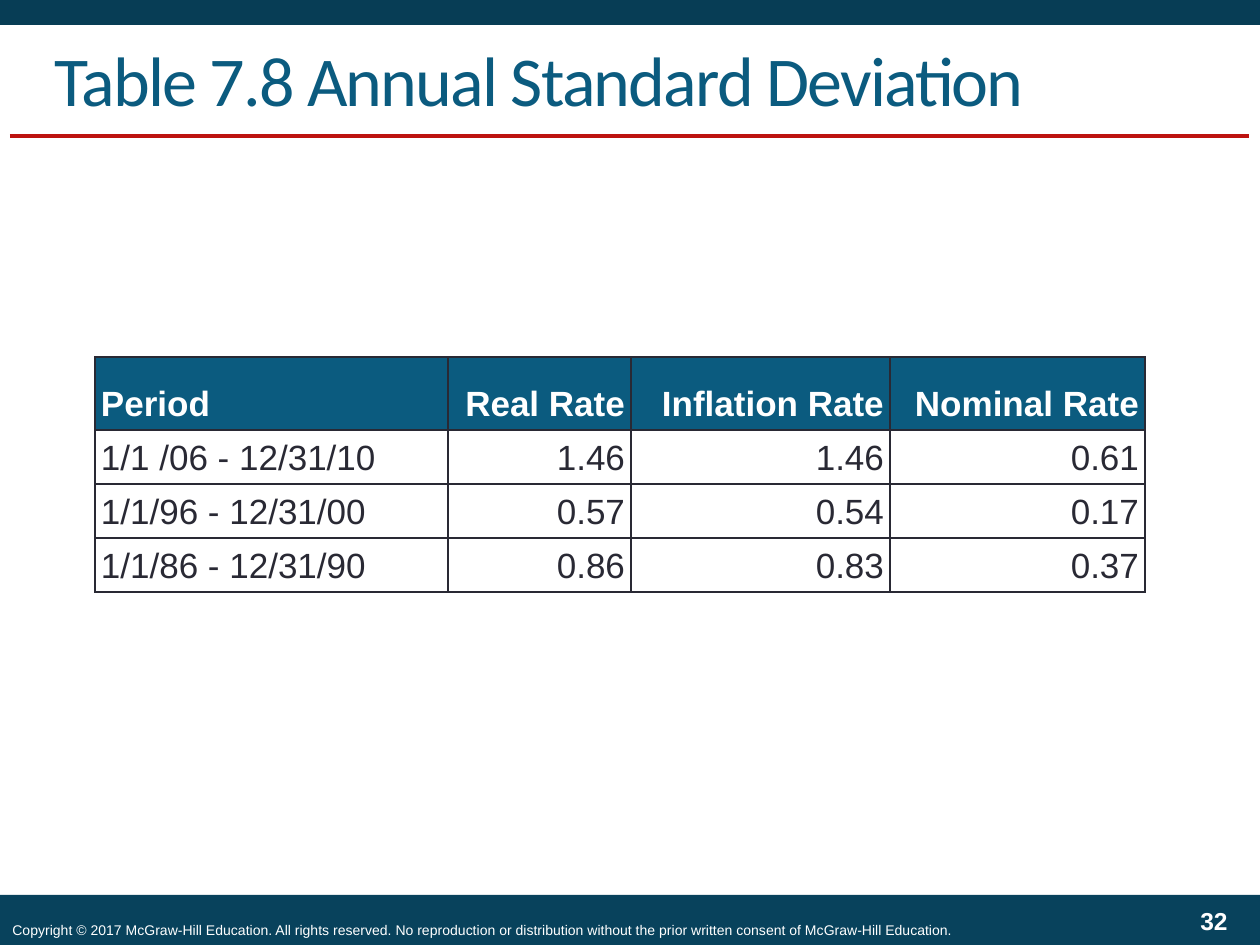
from lxml import etree
from pptx import Presentation
from pptx.dml.color import RGBColor
from pptx.enum.shapes import MSO_CONNECTOR, MSO_SHAPE
from pptx.enum.text import MSO_ANCHOR, PP_ALIGN
from pptx.oxml.ns import qn
from pptx.util import Emu, Pt

LEFT, RIGHT = PP_ALIGN.LEFT, PP_ALIGN.RIGHT
MIDDLE, BOTTOM = MSO_ANCHOR.MIDDLE, MSO_ANCHOR.BOTTOM
RECTANGLE = MSO_SHAPE.RECTANGLE
STRAIGHT = MSO_CONNECTOR.STRAIGHT

TOP_BAND = RGBColor(0x07, 0x3D, 0x55)
BOTTOM_BAND = RGBColor(0x08, 0x42, 0x5C)
BLUE = RGBColor(0x0B, 0x5B, 0x7F)
RED = RGBColor(0xBD, 0x13, 0x0F)
INK = RGBColor(0x29, 0x29, 0x34)
WHITE = RGBColor(0xFF, 0xFF, 0xFF)

TITLE = "Table 7.8 Annual Standard Deviation"
RATES = [
    ("Period", "Real Rate", "Inflation Rate", "Nominal Rate"),
    ("1/1 /06 - 12/31/10", "1.46", "1.46", "0.61"),
    ("1/1/96 - 12/31/00", "0.57", "0.54", "0.17"),
    ("1/1/86 - 12/31/90", "0.86", "0.83", "0.37"),
]
COLUMN_WIDTHS = [353, 183, 259, 255]
ROW_HEIGHTS = [73, 52, 52, 51]
BANDS = [((0, 0, 1260, 25), TOP_BAND), ((0, 895, 1260, 50), BOTTOM_BAND)]
COPYRIGHT = (
    "Copyright © 2017 McGraw-Hill Education. All rights reserved. "
    "No reproduction or distribution without the prior written consent "
    "of McGraw-Hill Education."
)
FOOTERS = [
    ("32", (1092, 898, 148, 46), 14, True, RIGHT, MIDDLE),
    (COPYRIGHT, (0, 910, 1260, 35), 8, False, LEFT, BOTTOM),
]


def px(length):
    return Emu(round(length * 914400 / 126))


def box(lengths):
    return [px(length) for length in lengths]


def style(paragraph, font_name, size, color, bold=False, align=LEFT):
    paragraph.alignment = align
    for run in paragraph.runs:
        run.font.name = font_name
        run.font.size = Pt(size)
        run.font.bold = bold
        run.font.color.rgb = color


def add_borders(cell):
    properties = cell._tc.get_or_add_tcPr()
    for position, side in enumerate(("lnL", "lnR", "lnT", "lnB")):
        border = etree.Element(qn(f"a:{side}"), w=str(Pt(1)))
        fill = etree.SubElement(border, qn("a:solidFill"))
        etree.SubElement(fill, qn("a:srgbClr"), val=str(INK))
        properties.insert(position, border)


def add_title(slide):
    title = slide.shapes.title
    title.left, title.top, title.width, title.height = box((42, 21, 1178, 115))
    frame = title.text_frame
    frame.text = TITLE
    frame.vertical_anchor = MIDDLE
    style(frame.paragraphs[0], "Calibri", 40, BLUE)
    frame.paragraphs[0].runs[0].font._element.set("spc", "-100")


def add_frame(slide):
    for place, color in BANDS:
        band = slide.shapes.add_shape(RECTANGLE, *box(place))
        band.shadow.inherit = False
        band.fill.solid()
        band.fill.fore_color.rgb = color
        band.line.fill.background()
    rule = slide.shapes.add_connector(STRAIGHT, *box((10, 136, 1249, 136)))
    rule.line.color.rgb = RED
    rule.line.width = Pt(2.25)
    etree.SubElement(rule._element.spPr, qn("a:effectLst"))
    for text, place, size, bold, align, anchor in FOOTERS:
        footer = slide.shapes.add_textbox(*box(place)).text_frame
        footer.word_wrap = True
        footer.vertical_anchor = anchor
        footer.text = text
        style(footer.paragraphs[0], "Arial", size, WHITE, bold, align)


def add_rates(slide):
    place = (95, 357, sum(COLUMN_WIDTHS), sum(ROW_HEIGHTS))
    table = slide.shapes.add_table(
        len(ROW_HEIGHTS), len(COLUMN_WIDTHS), *box(place)
    ).table
    table.horz_banding = False
    for column, width in zip(table.columns, COLUMN_WIDTHS):
        column.width = px(width)
    for r, (values, height) in enumerate(zip(RATES, ROW_HEIGHTS)):
        table.rows[r].height = px(height)
        header = r == 0
        for c, value in enumerate(values):
            cell = table.cell(r, c)
            cell.text = value
            cell.vertical_anchor = BOTTOM
            cell.margin_left = cell.margin_right = px(6)
            cell.margin_top = cell.margin_bottom = px(6)
            if header:
                cell.fill.solid()
                cell.fill.fore_color.rgb = BLUE
            else:
                cell.fill.background()
            add_borders(cell)
            style(cell.text_frame.paragraphs[0], "Arial", 20,
                  WHITE if header else INK, header, RIGHT if c else LEFT)


def main():
    deck = Presentation()
    deck.slide_width, deck.slide_height = box((1260, 945))
    slide = deck.slides.add_slide(deck.slide_layouts[5])
    add_frame(slide)
    add_title(slide)
    add_rates(slide)
    deck.save("out.pptx")


if __name__ == "__main__":
    main()
